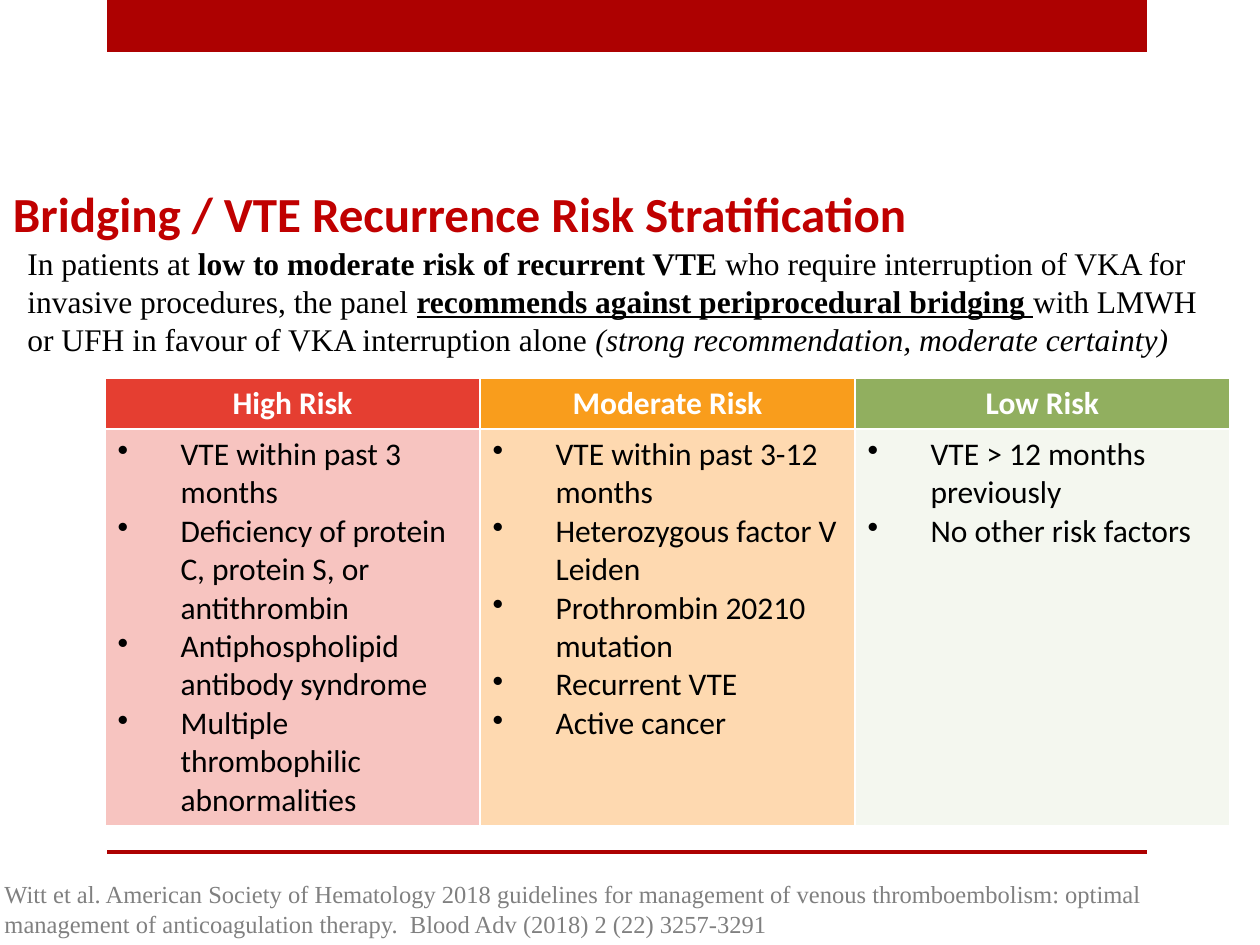
from lxml.etree import SubElement
from pptx import Presentation
from pptx.dml.color import RGBColor as Color
from pptx.enum.shapes import MSO_SHAPE as Shape
from pptx.enum.text import MSO_ANCHOR as Anchor, PP_ALIGN as Align
from pptx.oxml.ns import qn
from pptx.util import Pt

EMU_PER_PX = 914400 / 126
COLORS = {
    "band": "AD0101", "title": "C00000", "text": "000000",
    "header_text": "FFFFFF", "source": "808080",
    "high": "E53E31", "moderate": "F99D1C", "low": "91AF5F",
    "high_body": "E63E30", "moderate_body": "FED9B0", "low_body": "C9D7AF",
}
RISKS = [
    ("high", "High Risk", 30, [
        "VTE within past 3 months",
        "Deficiency of protein C, protein S, or antithrombin",
        "Antiphospholipid antibody syndrome",
        "Multiple thrombophilic abnormalities"]),
    ("moderate", "Moderate Risk", 100, [
        "VTE within past 3-12 months",
        "Heterozygous factor V Leiden",
        "Prothrombin 20210 mutation",
        "Recurrent VTE",
        "Active cancer"]),
    ("low", "Low Risk", 20, [
        "VTE > 12 months previously",
        "No other risk factors"]),
]
RECOMMENDATION = [
    ("In patients at ", ""),
    ("low to moderate risk of recurrent VTE ", "b"),
    ("who require interruption of VKA for invasive procedures, the panel ", ""),
    ("recommends against periprocedural bridging ", "bu"),
    ("with LMWH or UFH in favour of VKA interruption alone ", ""),
    ("(strong recommendation, moderate certainty)", "i"),
]
SOURCE = ("Witt et al. American Society of Hematology 2018 guidelines for management "
          "of venous thromboembolism: optimal management of anticoagulation therapy.  "
          "Blood Adv (2018) 2 (22) 3257-3291")


def px(length):
    return round(length * EMU_PER_PX)


class SlideBuilder:
    heading_font = "Calibri"
    body_font = "Times New Roman"

    def __init__(self, slide):
        self.slide = slide

    def paint(self, fill, color, opacity=100):
        """Fill with a solid colour; opacity is in percent."""
        fill.solid()
        fill.fore_color.rgb = Color.from_string(COLORS[color])
        if opacity < 100:
            rgb = fill._xPr.find(".//" + qn("a:srgbClr"))
            SubElement(rgb, qn("a:alpha"), val=str(opacity * 1000))

    def style(self, paragraph, name, size, color, bold=None):
        font = paragraph.font
        font.name, font.size, font.bold = name, Pt(size), bold
        font.color.rgb = Color.from_string(COLORS[color])

    def bar(self, *box):
        shape = self.slide.shapes.add_shape(Shape.RECTANGLE, *map(px, box))
        shape.shadow.inherit = False
        self.paint(shape.fill, "band")
        shape.line.fill.background()

    def text(self, box, runs, font, size, color, bold=None, inset=None):
        """Add one paragraph of (text, flags) runs, flags being b, i and u."""
        frame = self.slide.shapes.add_textbox(*map(px, box)).text_frame
        frame.word_wrap = True
        if inset is not None:
            frame.margin_left = frame.margin_right = px(inset)
            frame.margin_top = frame.margin_bottom = px(inset)
        paragraph = frame.paragraphs[0]
        self.style(paragraph, font, size, color, bold)
        for content, flags in runs:
            run = paragraph.add_run()
            run.text = content
            if "b" in flags:
                run.font.bold = True
            if "i" in flags:
                run.font.italic = True
            if "u" in flags:
                run.font.underline = True

    def bullet(self, paragraph, indent):
        properties = paragraph._p.get_or_add_pPr()
        properties.set("marL", str(px(indent)))
        properties.set("indent", str(-px(indent)))
        mark = SubElement(properties, qn("a:buChar"), char="•")
        properties.insert(0, mark)

    def risk_table(self, left, top, column_width, row_heights, risks):
        size = column_width * len(risks), sum(row_heights)
        table = self.slide.shapes.add_table(
            len(row_heights), len(risks), *map(px, (left, top, *size))).table
        for row, height in zip(table.rows, row_heights):
            row.height = px(height)
        for index, (key, heading, opacity, factors) in enumerate(risks):
            table.columns[index].width = px(column_width)
            header, body = table.cell(0, index), table.cell(1, index)
            self.paint(header.fill, key)
            self.paint(body.fill, key + "_body", opacity)
            header.vertical_anchor = Anchor.MIDDLE
            header.text = heading
            paragraph = header.text_frame.paragraphs[0]
            paragraph.alignment = Align.CENTER
            self.style(paragraph, self.heading_font, 18, "header_text", True)
            body.text = "\n".join(factors)
            for paragraph in body.text_frame.paragraphs:
                self.style(paragraph, self.heading_font, 18, "text", False)
                self.bullet(paragraph, 63)


def main():
    presentation = Presentation()
    presentation.slide_width, presentation.slide_height = px(1260), px(945)
    slide = presentation.slides.add_slide(presentation.slide_layouts[6])
    builder = SlideBuilder(slide)
    builder.bar(107, 0, 1040, 52)
    builder.bar(107, 850, 1040, 4)
    builder.text((13, 184, 1218, 78),
                 [("Bridging / VTE Recurrence Risk Stratification", "")],
                 builder.heading_font, 28, "title", bold=True, inset=0)
    builder.risk_table(105, 378, 375, (51, 397), RISKS)
    builder.text((15, 238, 1216, 127), RECOMMENDATION, builder.body_font, 18, "text")
    builder.text((-8, 873, 1269, 72), [(SOURCE, "")], builder.body_font, 14, "source")
    presentation.save("out.pptx")


if __name__ == "__main__":
    main()
